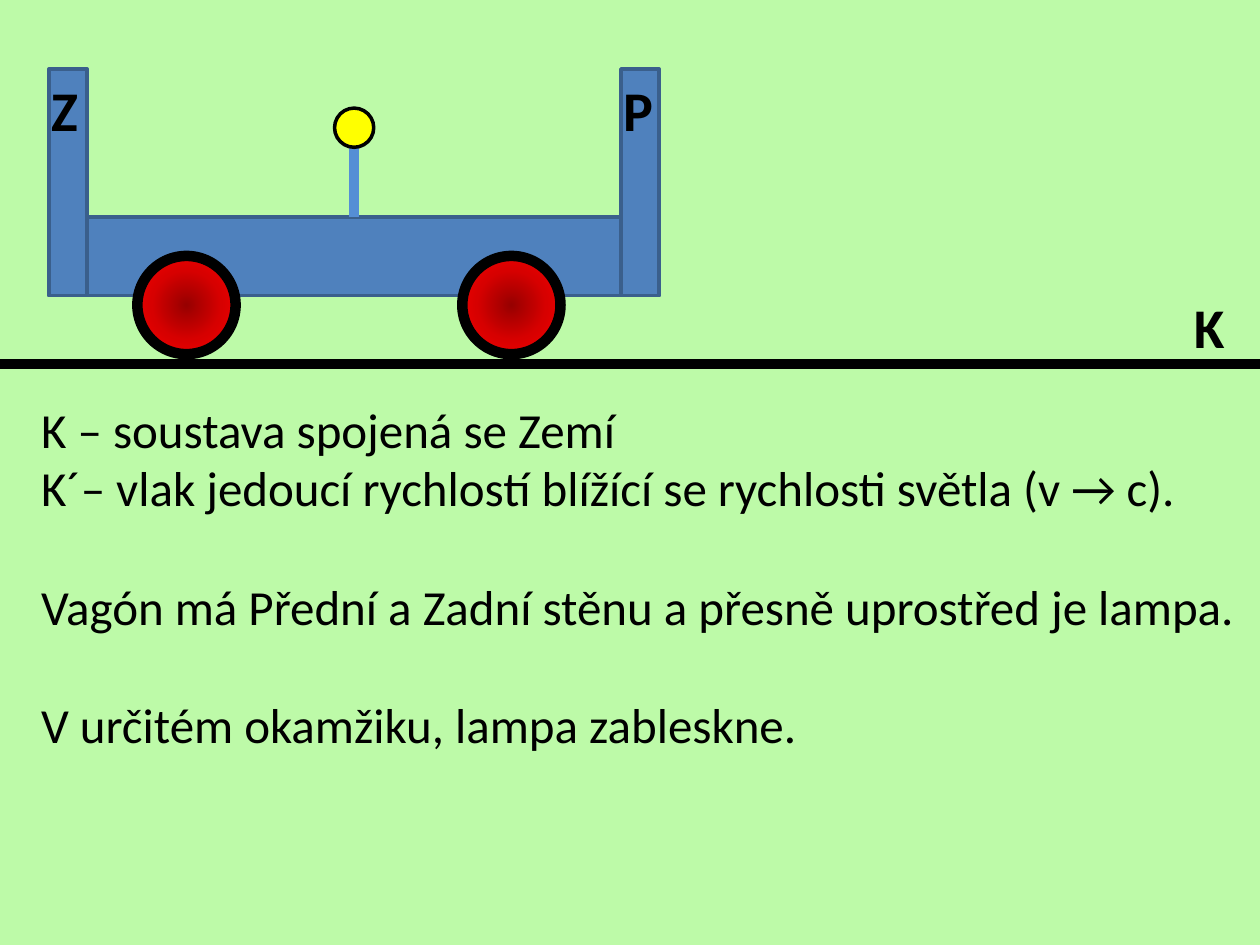
"""Build a slide about a railway wagon with a lamp in its middle."""
import dataclasses

import pptx
import pptx.dml.color
import pptx.enum.shapes
import pptx.enum.text
import pptx.oxml
import pptx.oxml.ns
import pptx.util

Cm = pptx.util.Cm
Pt = pptx.util.Pt
SHAPE = pptx.enum.shapes.MSO_SHAPE
NSDECL = pptx.oxml.ns.nsdecls("a")


@dataclasses.dataclass(frozen=True)
class Theme:
    """Colours, font and sizes of the slide."""
    background: str = "BDFAA8"
    body: str = "4F81BD"
    body_line: str = "3A5F8C"
    pole: str = "558ED5"
    lamp: str = "FFFF00"
    ink: str = "000000"
    wheel: tuple = ((0, "970000"), (50, "D70000"), (100, "FF0000"))
    font: str = "Calibri"
    text_size: int = 28
    label_size: int = 32
    thin: int = 2
    thick: int = 6


THEME = Theme()


def rgb(value):
    """Turn a hex string into a colour."""
    return pptx.dml.color.RGBColor.from_string(value)


def add_text(shapes, box, text, size=THEME.text_size, bold=False, wrap=True, gap=0):
    """Add a text box with one paragraph per line and a gap before all but the first block."""
    tf = shapes.add_textbox(*(Cm(v) for v in box)).text_frame
    tf.word_wrap = wrap
    blocks = [block.split("\n") for block in text.split("\n\n")]
    lines = [(line, i > 0 and j == 0) for i, block in enumerate(blocks)
             for j, line in enumerate(block)]
    for n, (line, opens_block) in enumerate(lines):
        p = tf.add_paragraph() if n else tf.paragraphs[0]
        p.space_before = Pt(gap if opens_block else 0)
        r = p.add_run()
        r.text = line
        r.font.name = THEME.font
        r.font.size = Pt(size)
        r.font.bold = bold
        r.font.color.rgb = rgb(THEME.ink)


def add_label(shapes, x, y, text):
    """Add a bold one-letter label."""
    add_text(shapes, (x, y, 1.1, 1.62), text, size=THEME.label_size, bold=True, wrap=False)


def add_shape(shapes, kind, box, fill, line, width):
    """Add a filled and outlined preset shape."""
    sp = shapes.add_shape(kind, *(Cm(v) for v in box))
    sp.shadow.inherit = False
    sp.fill.solid()
    sp.fill.fore_color.rgb = rgb(fill)
    sp.line.color.rgb = rgb(line)
    sp.line.width = Pt(width)
    return sp


def add_line(shapes, start, end, color, width):
    """Add a straight line without a shadow."""
    line = shapes.add_connector(pptx.enum.shapes.MSO_CONNECTOR.STRAIGHT,
                                *(Cm(v) for v in start + end))
    line.line.color.rgb = rgb(color)
    line.line.width = Pt(width)
    line._element.spPr.append(pptx.oxml.parse_xml(f"<a:effectLst {NSDECL}/>"))
    return line


def add_wheel(shapes, x, y, size):
    """Add a wheel with a radial gradient."""
    sp = add_shape(shapes, SHAPE.OVAL, (x, y, size, size),
                   THEME.wheel[0][1], THEME.ink, THEME.thick)
    stops = "".join(f'<a:gs pos="{pos * 1000}"><a:srgbClr val="{color}"/></a:gs>'
                    for pos, color in THEME.wheel)
    gradient = pptx.oxml.parse_xml(
        f'<a:gradFill {NSDECL} rotWithShape="1"><a:gsLst>{stops}</a:gsLst>'
        '<a:path path="circle"><a:fillToRect l="50000" t="50000" r="50000" b="50000"/>'
        '</a:path></a:gradFill>')
    sp_pr = sp._element.spPr
    sp_pr.replace(sp_pr.find(pptx.oxml.ns.qn("a:solidFill")), gradient)


def draw_wagon(slide, x, y, w, h):
    """Draw the wagon with its walls, wheels, lamp and wall labels."""
    shapes = slide.shapes.add_group_shape().shapes
    wall, floor, wheel, lamp_size, lamp_top = 0.77, 1.58, 1.98, 0.79, 0.79
    middle = x + w / 2
    body = (THEME.body, THEME.body_line, THEME.thin)
    walls = {"P": x + w - wall, "Z": x}
    base = add_shape(shapes, SHAPE.RECTANGLE, (x, y + h - floor, w, floor), *body)
    for left in walls.values():
        add_shape(shapes, SHAPE.RECTANGLE, (left, y, wall, h), *body)
    for offset in (1.78, 8.33):
        add_wheel(shapes, x + offset, y + h - 0.8, wheel)
    pole = add_line(shapes, (middle, y + h - floor), (middle, y + lamp_top + lamp_size),
                    THEME.pole, THEME.thick)
    pole.begin_connect(base, 0)
    add_shape(shapes, SHAPE.OVAL,
              (middle - lamp_size / 2, y + lamp_top, lamp_size, lamp_size),
              THEME.lamp, THEME.ink, THEME.thin)
    for text, left in walls.items():
        add_label(slide.shapes, left - 0.21, y, text)


def draw_ground(slide, x, y, w):
    """Draw the ground line and the label of its frame."""
    add_line(slide.shapes, (x, y), (x + w, y), THEME.ink, THEME.thick)
    add_label(slide.shapes, x + w - 1.58, y - 1.57, "K")


def draw_explanation(slide, x, y, w, h):
    """Write the description of the two frames and the wagon."""
    add_text(slide.shapes, (x, y, w, h),
             "K – soustava spojená se Zemí\n"
             "K´– vlak jedoucí rychlostí blížící se rychlosti světla (v → c).\n\n"
             "Vagón má Přední a Zadní stěnu a přesně uprostřed je lampa.\n\n"
             "V určitém okamžiku, lampa zableskne.", gap=34)


def main():
    """Build and save the presentation."""
    prs = pptx.Presentation()
    prs.slide_width, prs.slide_height = Cm(25.4), Cm(19.05)
    slide = prs.slides.add_slide(prs.slide_layouts[6])
    slide.background.fill.solid()
    slide.background.fill.fore_color.rgb = rgb(THEME.background)
    draw_wagon(slide, 0.99, 1.39, 12.3, 4.57)
    draw_explanation(slide, 0.58, 7.92, 24.82, 9.12)
    draw_ground(slide, 0, 7.34, 25.4)
    prs.save("out.pptx")


if __name__ == "__main__":
    main()
